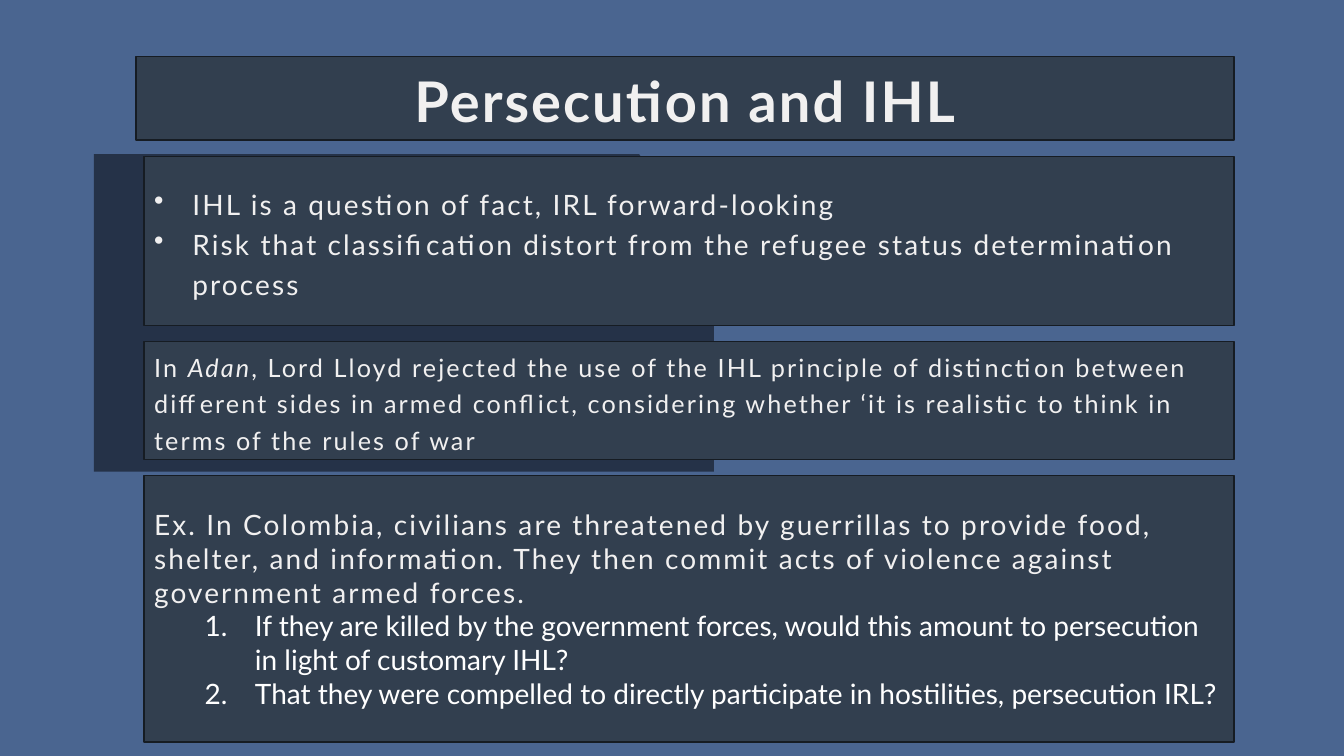
from lxml.etree import SubElement
from pptx import Presentation
from pptx.dml.color import RGBColor
from pptx.enum.shapes import MSO_SHAPE
from pptx.enum.text import MSO_ANCHOR, PP_ALIGN
from pptx.oxml.ns import qn
from pptx.util import Inches, Pt

COLORS = {
    "background": "4A6590",
    "backdrop": "253248",
    "panel": "323F4F",
    "border": "161C23",
    "text": "F1F0F0",
    "question": "FFFFFF",
}
FONT = "Lato"


def color(name):
    return RGBColor.from_string(COLORS[name])


def paint(shape, name):
    shape.shadow.inherit = False
    shape.fill.solid()
    shape.fill.fore_color.rgb = color(name)


def add_backdrop(page):
    corners = [(6.34, 1.53), (7.08, 2.59), (7.08, 4.68), (0.93, 4.68)]
    builder = page.shapes.build_freeform(Inches(0.93), Inches(1.53))
    builder.add_line_segments([(Inches(x), Inches(y)) for x, y in corners], close=True)
    backdrop = builder.convert_to_shape()
    paint(backdrop, "backdrop")
    backdrop.line.fill.background()


def add_panel(page, left, top, width, height, anchor=MSO_ANCHOR.MIDDLE):
    panel = page.shapes.add_shape(
        MSO_SHAPE.RECTANGLE, Inches(left), Inches(top), Inches(width), Inches(height)
    )
    paint(panel, "panel")
    panel.line.color.rgb = color("border")
    panel.line.width = Pt(1)
    frame = panel.text_frame
    frame.word_wrap = True
    frame.vertical_anchor = anchor
    return frame


def add_para(frame, spans, size=20, line_spacing=1.0, align=PP_ALIGN.LEFT,
             ink="text", bold=False, tracking=1.5):
    para = frame.paragraphs[0]
    if para.runs:
        para = frame.add_paragraph()
    para.alignment = align
    para.line_spacing = line_spacing
    para.font.name = FONT
    para.font.size = Pt(size)
    para.font.bold = bold
    para.font.color.rgb = color(ink)
    for text, italic in spans:
        span = para.add_run()
        span.text = text
        span.font.italic = italic
        span._r.get_or_add_rPr().set("spc", str(int(tracking * 100)))
    return para


def add_marker(para, tag, attribute, value, margin, hanging):
    properties = para._p.get_or_add_pPr()
    properties.set("marL", str(Inches(margin)))
    properties.set("indent", str(-Inches(hanging)))
    marker = SubElement(properties, qn(tag))
    marker.set(attribute, value)
    properties.find(qn("a:defRPr")).addprevious(marker)


def main():
    deck = Presentation()
    deck.slide_width = Inches(13.33)
    deck.slide_height = Inches(7.5)
    page = deck.slides.add_slide(deck.slide_layouts[6])
    page.background.fill.solid()
    page.background.fill.fore_color.rgb = color("background")
    add_backdrop(page)

    title = add_panel(page, 1.35, 0.56, 10.89, 0.83, MSO_ANCHOR.BOTTOM)
    add_para(title, [("Persecution and IHL", False)], size=40, line_spacing=0.9,
             align=PP_ALIGN.CENTER, bold=True)

    points, case, example = [
        add_panel(page, 1.43, top, 10.81, height)
        for top, height in [(1.55, 1.68), (3.39, 1.17), (4.72, 2.64)]
    ]

    for text in [
        "IHL is a question of fact, IRL forward-looking",
        "Risk that classification distort from the refugee status determination process",
    ]:
        para = add_para(points, [(text, False)], line_spacing=1.2)
        add_marker(para, "a:buChar", "char", "•", 0.38, 0.38)

    add_para(case, [
        ("In ", False),
        ("Adan", True),
        (", Lord Lloyd rejected the use of the IHL principle of distinction between "
         "different sides in armed conflict, considering whether ‘it is realistic to "
         "think in terms of the rules of war", False),
    ], size=18, line_spacing=1.2)

    add_para(example, [(
        "Ex. In Colombia, civilians are threatened by guerrillas to provide food, "
        "shelter, and information. They then commit acts of violence against "
        "government armed forces.", False)])
    for text in [
        "If they are killed by the government forces, would this amount to "
        "persecution in light of customary IHL?",
        "That they were compelled to directly participate in hostilities, "
        "persecution IRL?",
    ]:
        para = add_para(example, [(text, False)], ink="question", tracking=0)
        para.level = 1
        add_marker(para, "a:buAutoNum", "type", "arabicPeriod", 1, 0.5)

    deck.save("out.pptx")


if __name__ == "__main__":
    main()
